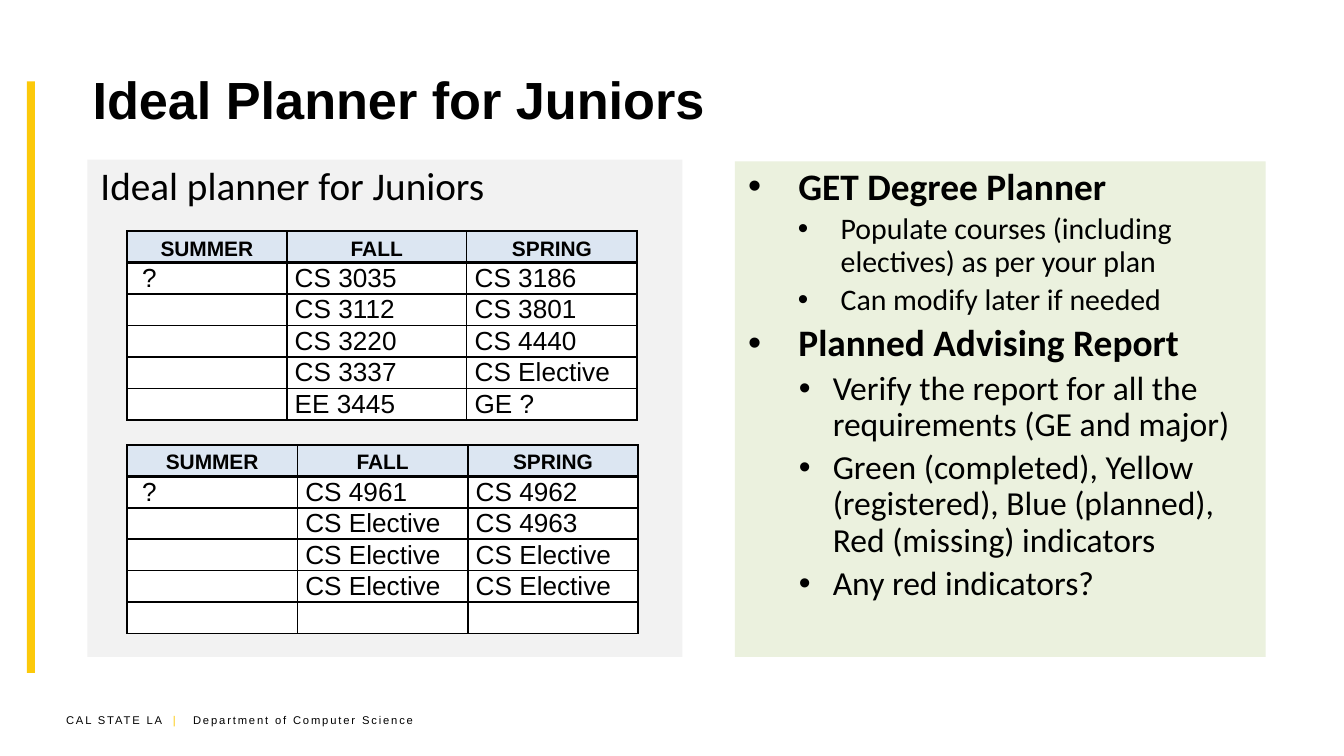
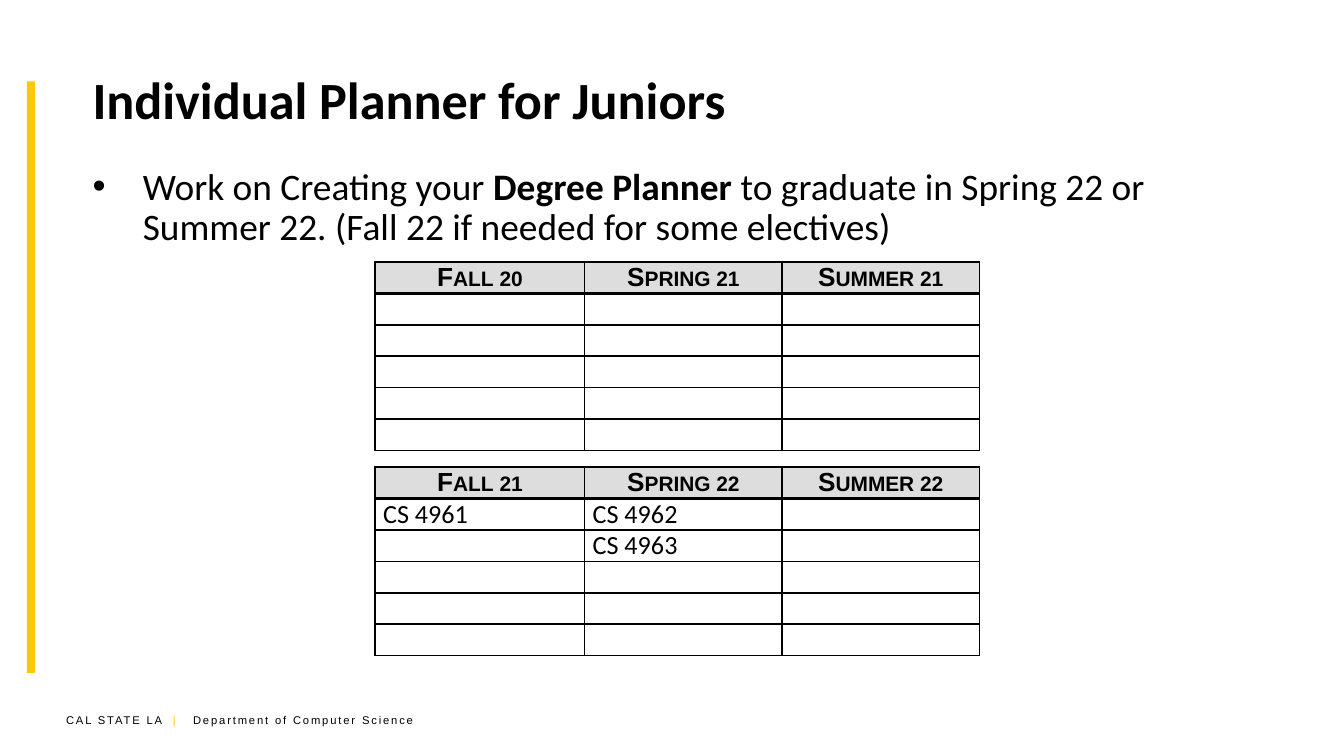
import pptx
import pptx.dml.color
import pptx.enum.shapes
import pptx.enum.text
import pptx.oxml
import pptx.oxml.ns
import pptx.util

Cm, Pt = pptx.util.Cm, pptx.util.Pt
RGBColor = pptx.dml.color.RGBColor
Anchor = pptx.enum.text.MSO_ANCHOR
Align = pptx.enum.text.PP_ALIGN

# Content: a planner maps each term to its courses.
JUNIOR_PLANNERS = [
    {"summer": [" ?"],
     "fall": ["CS 3035", "CS 3112", "CS 3220", "CS 3337", "EE 3445"],
     "spring": ["CS 3186", "CS 3801", "CS 4440", "CS Elective", "GE ?"]},
    {"summer": [" ?"],
     "fall": ["CS 4961", "CS Elective", "CS Elective", "CS Elective"],
     "spring": ["CS 4962", "CS 4963", "CS Elective", "CS Elective"]},
]
INDIVIDUAL_PLANNERS = [
    {"Fall 20": [], "Spring 21": [], "Summer 21": []},
    {"Fall 21": ["CS 4961"], "Spring 22": ["CS 4962", "CS 4963"], "Summer 22": []},
]

# Bullet styles: level, left indent and hanging indent in cm, size, bold.
HEADING = (0, 0.95, 0.95, 20, True)
POINT = (0, 0.95, 0.95, 20, False)
SMALL_ITEM = (1, 1.75, 0.81, 16, False)
ITEM = (1, 1.6, 0.64, 18, False)
PLAIN = (0, 0, 0, 21, False)

# Paragraphs: style and spans; a span in a tuple is bold.
PLANNER_CAPTION = [(PLAIN, ["Ideal planner for Juniors"])]
PLANNER_STEPS = [
    (HEADING, ["GET Degree Planner"]),
    (SMALL_ITEM, ["Populate courses (including electives) as per your plan"]),
    (SMALL_ITEM, ["Can modify later if needed"]),
    (HEADING, ["Planned Advising Report"]),
    (ITEM, ["Verify the report for all the requirements (GE and major)"]),
    (ITEM, ["Green (completed), Yellow (registered), Blue (planned), "
            "Red (missing) indicators"]),
    (ITEM, ["Any red indicators?"]),
]
INDIVIDUAL_TASK = [
    (POINT, ["Work on Creating your ", ("Degree Planner ",),
             "to graduate in Spring 22 or Summer 22. "
             "(Fall 22 if needed for some electives)"]),
]

BLACK = RGBColor(0x00, 0x00, 0x00)
WHITE = RGBColor(0xFF, 0xFF, 0xFF)
GOLD = RGBColor(0xFC, 0xC9, 0x0A)
PALE_GRAY = RGBColor(0xF2, 0xF2, 0xF2)
PALE_GREEN = RGBColor(0xEB, 0xF1, 0xDE)
PALE_BLUE = RGBColor(0xDC, 0xE6, 0xF2)
HEADER_GRAY = RGBColor(0xDD, 0xDD, 0xDD)

FOOTER = [("CAL STATE LA", BLACK), ("\t|", GOLD),
          ("\tDepartment of Computer Science", BLACK)]
FOOTER_TABS = (2.02, 2.4)
COURSE_ROWS = 5
ROW_HEIGHT = 0.57
TABLE_SIZE = 14


def add_element(parent, tag, inner="", **attributes):
    pairs = " ".join(f'{name}="{value}"' for name, value in attributes.items())
    namespace = pptx.oxml.ns.nsdecls("a")
    element = pptx.oxml.parse_xml(
        f"<a:{tag} {namespace} {pairs}>{inner}</a:{tag}>")
    parent.append(element)
    return element


def add_span(para, text, size, face, color=BLACK, bold=False):
    span = para.add_run()
    span.text = text
    span.font.size = Pt(size)
    span.font.name = face
    span.font.color.rgb = color
    span.font.bold = bold
    return span


def add_text_box(page, frame, anchor=Anchor.TOP):
    box = page.shapes.add_textbox(*map(Cm, frame))
    box.text_frame.word_wrap = True
    box.text_frame.vertical_anchor = anchor
    return box.text_frame


def add_panel(page, frame, color):
    panel = page.shapes.add_shape(
        pptx.enum.shapes.MSO_SHAPE.RECTANGLE, *map(Cm, frame))
    panel.shadow.inherit = False
    panel.fill.solid()
    panel.fill.fore_color.rgb = color
    panel.line.fill.background()
    panel.text_frame.word_wrap = True
    panel.text_frame.vertical_anchor = Anchor.TOP
    return panel.text_frame


def write_paragraphs(text_frame, paragraphs):
    for index, (style, spans) in enumerate(paragraphs):
        level, indent, hanging, size, bold = style
        para = text_frame.add_paragraph() if index else text_frame.paragraphs[0]
        para.alignment = Align.LEFT
        para.level = level
        para.line_spacing = 0.9
        if index:
            para.space_before = Pt(size * 0.2)
        if indent:
            properties = para._p.get_or_add_pPr()
            properties.set("marL", str(Cm(indent)))
            properties.set("indent", str(-Cm(hanging)))
            add_element(properties, "buFont", typeface="Arial")
            add_element(properties, "buChar", char="•")
        for part in spans:
            strong = isinstance(part, tuple)
            add_span(para, part[0] if strong else part, size, "Calibri",
                     bold=bold or strong)


def set_borders(cell, row):
    """Draw 1 pt edges, with a 1.5 pt rule under the header row."""
    heavy = {0: "lnB", 1: "lnT"}.get(row)
    properties = cell._tc.get_or_add_tcPr()
    for side in ("lnL", "lnR", "lnT", "lnB"):
        add_element(
            properties, side,
            f'<a:solidFill><a:srgbClr val="{BLACK}"/></a:solidFill>',
            w=Pt(1.5 if side == heavy else 1))


def add_planner(page, left, top, widths, planner, header_color, face,
                body_color=None):
    table = page.shapes.add_table(
        COURSE_ROWS + 1, len(planner), Cm(left), Cm(top),
        Cm(sum(widths)), Cm(ROW_HEIGHT * (COURSE_ROWS + 1))).table
    table.first_row = table.horz_banding = False
    for row in table.rows:
        row.height = Cm(ROW_HEIGHT)
    for column, (term, courses) in enumerate(planner.items()):
        table.columns[column].width = Cm(widths[column])
        blanks = [""] * (COURSE_ROWS - len(courses))
        for row, text in enumerate([term] + courses + blanks):
            cell = table.cell(row, column)
            cell.vertical_anchor = Anchor.MIDDLE
            cell.margin_left = cell.margin_right = Cm(0.15)
            cell.margin_top = cell.margin_bottom = 0
            set_borders(cell, row)
            color = body_color if row else header_color
            if color is None:
                cell.fill.background()
            else:
                cell.fill.solid()
                cell.fill.fore_color.rgb = color
            para = cell.text_frame.paragraphs[0]
            if row == 0:
                para.alignment = Align.CENTER
                span = add_span(para, text, TABLE_SIZE, "Arial", bold=True)
                span.font._element.set("cap", "small")
            elif text:
                add_span(para, text, TABLE_SIZE, face)
            else:
                add_element(para._p, "endParaRPr",
                            f'<a:latin typeface="{face}"/>',
                            sz=TABLE_SIZE * 100)


def add_page(deck, title, title_face):
    """Add a blank page with the gold bar, footer and title."""
    page = deck.slides.add_slide(deck.slide_layouts[6])
    add_panel(page, (0.51, 1.54, 0.15, 11.18), GOLD)

    footer = add_text_box(page, (1, 13.36, 7.42, 0.51))
    para = footer.paragraphs[0]
    stops = "".join(f'<a:tab pos="{Cm(stop)}" algn="l"/>' for stop in FOOTER_TABS)
    add_element(para._p.get_or_add_pPr(), "tabLst", stops)
    for text, color in FOOTER:
        span = add_span(para, text, 6, "Arial", color)
        span.font._element.set("spc", "100")

    heading = add_text_box(page, (1.5, 0.66, 22.6, 2.4), Anchor.MIDDLE)
    add_span(heading.paragraphs[0], title, 28, title_face, bold=True)
    return page


def main():
    deck = pptx.Presentation()
    deck.slide_width, deck.slide_height = Cm(25.4), Cm(14.29)

    page = add_page(deck, "Ideal Planner for Juniors", "Arial")
    write_paragraphs(add_panel(page, (1.65, 3.02, 11.25, 9.4), PALE_GRAY),
                     PLANNER_CAPTION)
    layouts = [(4.37, (3.02, 3.4, 3.22)), (8.41, (3.22, 3.22, 3.22))]
    for planner, (top, widths) in zip(JUNIOR_PLANNERS, layouts):
        add_planner(page, 2.4, top, widths, planner, PALE_BLUE, "Arial", WHITE)
    write_paragraphs(add_panel(page, (13.89, 3.05, 10.03, 9.37), PALE_GREEN),
                     PLANNER_STEPS)

    page = add_page(deck, "Individual Planner for Juniors", "Calibri")
    write_paragraphs(add_text_box(page, (1.5, 3.05, 22.6, 9.65)), INDIVIDUAL_TASK)
    for planner, top in zip(INDIVIDUAL_PLANNERS, (4.95, 8.83)):
        add_planner(page, 7.09, top, (3.96, 3.73, 3.73), planner,
                    HEADER_GRAY, "Calibri")

    deck.save("out.pptx")


if __name__ == "__main__":
    main()
